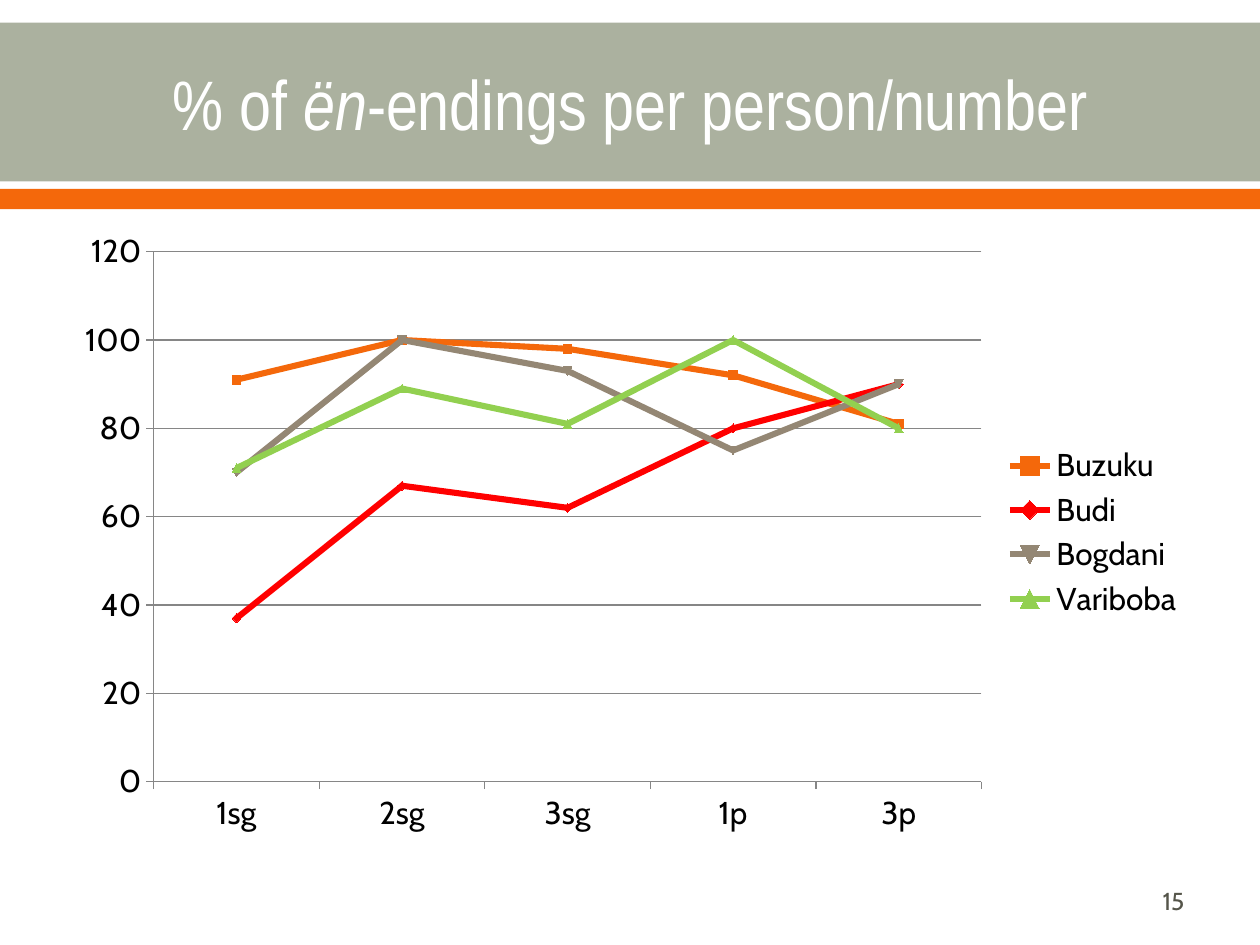
from lxml import etree
from pptx import Presentation
from pptx.chart.data import CategoryChartData
from pptx.dml.color import RGBColor
from pptx.enum.chart import XL_CHART_TYPE, XL_LEGEND_POSITION, XL_MARKER_STYLE, XL_TICK_MARK
from pptx.enum.shapes import MSO_SHAPE
from pptx.enum.text import MSO_ANCHOR, PP_ALIGN
from pptx.oxml.ns import qn
from pptx.util import Inches, Pt

LINE_MARKERS = XL_CHART_TYPE.LINE_MARKERS
LEGEND_RIGHT = XL_LEGEND_POSITION.RIGHT
TICK_OUT = XL_TICK_MARK.OUTSIDE
RECT = MSO_SHAPE.RECTANGLE
MIDDLE = MSO_ANCHOR.MIDDLE
CENTER, RIGHT = PP_ALIGN.CENTER, PP_ALIGN.RIGHT

WHITE = RGBColor(0xFF, 0xFF, 0xFF)
BLACK = RGBColor(0, 0, 0)
SAGE = RGBColor(0xAB, 0xB1, 0x9F)
ORANGE = RGBColor(0xF4, 0x68, 0x0B)
RED = RGBColor(0xFF, 0, 0)
TAUPE = RGBColor(0x94, 0x87, 0x74)
GREEN = RGBColor(0x92, 0xD0, 0x50)
GRID_GREY = RGBColor(0x86, 0x86, 0x86)
NUMBER_GREY = RGBColor(0x55, 0x55, 0x4A)

WIDTH, HEIGHT = 10, 7.5
MARGIN = 0.05 * WIDTH
CONTENT_WIDTH = WIDTH - 2 * MARGIN

PERSONS = ["1sg", "2sg", "3sg", "1p", "3p"]
AUTHORS = [
    ("Buzuku", [91, 100, 98, 92, 81], ORANGE, XL_MARKER_STYLE.SQUARE),
    ("Budi", [37, 67, 62, 80, 90], RED, XL_MARKER_STYLE.DIAMOND),
    ("Bogdani", [70, 100, 93, 75, 90], TAUPE, None),
    ("Variboba", [71, 89, 81, 100, 80], GREEN, XL_MARKER_STYLE.TRIANGLE),
]
PLOT_AREA = {"x": 0.08, "y": 0.05, "w": 0.73, "h": 0.85}


def box(left, top, width, height):
    return [Inches(v) for v in (left, top, width, height)]


def write(tf, *parts, font, size, color, align):
    """Write one paragraph; each part is a text and whether it is italic."""
    tf.word_wrap = True
    tf.vertical_anchor = MIDDLE
    p = tf.paragraphs[0]
    p.alignment = align
    for text, italic in parts:
        r = p.add_run()
        r.text = text
        r.font.name, r.font.size, r.font.italic = font, Pt(size), italic
        r.font.color.rgb = color


def add_band(s, top, height, color):
    """Add a full-width band behind the title."""
    sp = s.shapes.add_shape(RECT, *box(0, top, WIDTH, height))
    sp.shadow.inherit = False
    sp.fill.solid()
    sp.fill.fore_color.rgb = color
    sp.line.fill.background()
    s.shapes.title.element.addprevious(sp.element)


def add_title(s):
    title = s.shapes.title
    title.left, title.top, title.width, title.height = box(MARGIN, 0.2, CONTENT_WIDTH, 1.22)
    write(title.text_frame, ("% of ", False), ("ën", True),
          ("-endings per person/number", False),
          font="Arial Narrow", size=40, color=WHITE, align=CENTER)


def set_plot_area(chart):
    """Fix the inner plot area as shares of the chart's size."""
    area = chart.element.find(".//" + qn("c:plotArea"))
    for old in area.findall(qn("c:layout")):
        area.remove(old)
    layout = etree.Element(qn("c:layout"))
    manual = etree.SubElement(layout, qn("c:manualLayout"))
    settings = {"layoutTarget": "inner", "xMode": "edge", "yMode": "edge", **PLOT_AREA}
    for name, value in settings.items():
        etree.SubElement(manual, qn("c:" + name)).set("val", str(value))
    area.insert(0, layout)


def style_line(line, color, width):
    line.color.rgb = color
    line.width = Pt(width)


def style_axes(chart):
    for axis in (chart.category_axis, chart.value_axis):
        axis.major_tick_mark = TICK_OUT
        style_line(axis.format.line, GRID_GREY, 0.75)
    values = chart.value_axis
    values.minimum_scale, values.maximum_scale, values.major_unit = 0, 120, 20
    values.has_major_gridlines = True
    style_line(values.major_gridlines.format.line, GRID_GREY, 0.75)


def style_series(series, color, marker_style):
    series.smooth = False
    style_line(series.format.line, color, 3.5)
    marker = series.marker
    marker.size = 5
    if marker_style is not None:
        marker.style = marker_style
    marker.format.fill.solid()
    marker.format.fill.fore_color.rgb = color
    style_line(marker.format.line, color, 0.75)


def add_line_chart(s):
    data = CategoryChartData()
    data.categories = PERSONS
    for name, values, _, _ in AUTHORS:
        data.add_series(name, values)
    frame = s.shapes.add_chart(LINE_MARKERS, *box(MARGIN, 1.75, CONTENT_WIDTH, 4.95), data)
    chart = frame.chart
    chart.has_title = False
    chart.font.name, chart.font.size = "Cabin", Pt(18)
    chart.font.color.rgb = BLACK
    chart.has_legend = True
    chart.legend.position = LEGEND_RIGHT
    chart.legend.include_in_layout = False
    plot = chart.plots[0]
    plot.vary_by_categories = False
    for series, (_, _, color, marker_style) in zip(plot.series, AUTHORS):
        style_series(series, color, marker_style)
    style_axes(chart)
    set_plot_area(chart)


def add_slide_number(s):
    width = CONTENT_WIDTH * 0.26
    tb = s.shapes.add_textbox(*box(WIDTH - MARGIN - width, 6.95, width, 0.4))
    write(tb.text_frame, ("15", False), font="Cabin", size=14, color=NUMBER_GREY, align=RIGHT)


def main():
    prs = Presentation()
    prs.slide_width, prs.slide_height = Inches(WIDTH), Inches(HEIGHT)
    s = prs.slides.add_slide(prs.slide_layouts[5])
    add_band(s, 0.18, 1.26, SAGE)
    add_band(s, 1.5, 0.16, ORANGE)
    add_title(s)
    add_line_chart(s)
    add_slide_number(s)
    prs.save("out.pptx")


if __name__ == "__main__":
    main()
